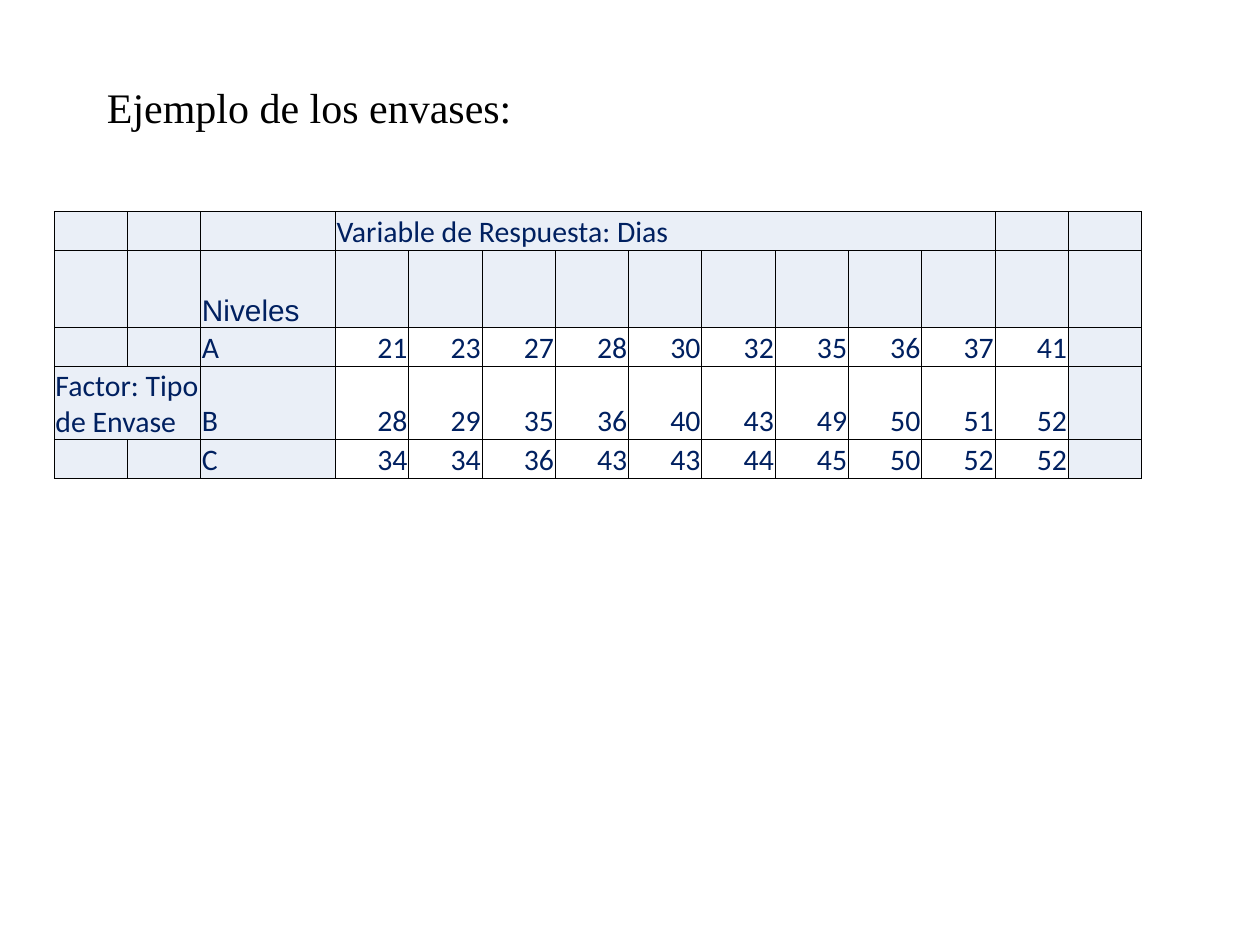
from lxml.etree import SubElement
from pptx import Presentation
from pptx.dml.color import RGBColor
from pptx.enum.text import MSO_ANCHOR, PP_ALIGN
from pptx.oxml import parse_xml
from pptx.oxml.ns import nsdecls, qn
from pptx.util import Inches, Pt

BLACK = RGBColor(0x00, 0x00, 0x00)
NAVY = RGBColor(0x00, 0x20, 0x60)
PALE_BLUE = RGBColor(0xEA, 0xEF, 0xF7)

# Content
HEADING = "Ejemplo de los envases:"
LABELS = {  # (row, column): text, font
    (0, 3): ("Variable de Respuesta: Dias", "Calibri"),
    (1, 2): ("Niveles", "Arial"),
    (3, 0): ("Factor: Tipo de Envase", "Calibri"),
}
DAYS = {
    "A": [21, 23, 27, 28, 30, 32, 35, 36, 37, 41],
    "B": [28, 29, 35, 36, 40, 43, 49, 50, 51, 52],
    "C": [34, 34, 36, 43, 43, 44, 45, 50, 52, 52],
}

# Layout
LEFT, TOP, WIDTH = 0.43, 1.68, 8.63
ROW_HEIGHTS = [0.31, 0.61, 0.31, 0.57, 0.31]
COLUMNS, LEVEL_COLUMN, LEVEL_WIDTH = 14, 2, 1.07
FIRST_DAYS_ROW = 2
MERGES = [((0, 3), (0, 11)), ((3, 0), (3, 1))]
TEXT_SIZE = 17


def add_run(paragraph, text, font, size, color):
    run = paragraph.add_run()
    run.text = text
    run.font.name = font
    run.font.size = Pt(size)
    run.font.color.rgb = color


def add_borders(cell):
    properties = cell._tc.get_or_add_tcPr()
    for position, side in enumerate(("lnL", "lnR", "lnT", "lnB")):
        properties.insert(position, parse_xml(
            f'<a:{side} {nsdecls("a")} w="{Pt(0.5)}"><a:solidFill>'
            f'<a:srgbClr val="{BLACK}"/></a:solidFill></a:{side}>'))


presentation = Presentation()
presentation.slide_width, presentation.slide_height = Inches(10), Inches(7.5)
slide = presentation.slides.add_slide(presentation.slide_layouts[6])

# Heading
heading = slide.shapes.add_textbox(Inches(0.75), Inches(0.6), Inches(8.58), Inches(0.5))
heading.text_frame.word_wrap = True
add_run(heading.text_frame.paragraphs[0], HEADING, "Times New Roman", 24, BLACK)

# Table grid
days_table = slide.shapes.add_table(
    len(ROW_HEIGHTS), COLUMNS, Inches(LEFT), Inches(TOP),
    Inches(WIDTH), Inches(sum(ROW_HEIGHTS))).table
days_table.first_row = days_table.horz_banding = False
for row, height in zip(days_table.rows, ROW_HEIGHTS):
    row.height = Inches(height)
for index, column in enumerate(days_table.columns):
    column.width = Inches(LEVEL_WIDTH if index == LEVEL_COLUMN
                          else (WIDTH - LEVEL_WIDTH) / (COLUMNS - 1))

# Labels and values by cell
texts = dict(LABELS)
values = set()
for row_index, (level, days) in enumerate(DAYS.items(), FIRST_DAYS_ROW):
    texts[row_index, LEVEL_COLUMN] = (level, "Calibri")
    for column_index, day in enumerate(days, LEVEL_COLUMN + 1):
        texts[row_index, column_index] = (str(day), "Calibri")
        values.add((row_index, column_index))

# Cells
for row_index in range(len(ROW_HEIGHTS)):
    for column_index in range(COLUMNS):
        place = (row_index, column_index)
        cell = days_table.cell(*place)
        cell.margin_left = cell.margin_right = cell.margin_top = Inches(0.01)
        cell.margin_bottom = 0
        cell.vertical_anchor = MSO_ANCHOR.BOTTOM
        paragraph = cell.text_frame.paragraphs[0]
        if place in values:
            cell.fill.background()
            paragraph.alignment = PP_ALIGN.RIGHT
        else:
            cell.fill.solid()
            cell.fill.fore_color.rgb = PALE_BLUE
        if place in texts:
            add_run(paragraph, *texts[place], TEXT_SIZE, NAVY)
        else:
            SubElement(paragraph._p, qn("a:endParaRPr"), sz=str(TEXT_SIZE * 100))
        add_borders(cell)

for first, last in MERGES:
    days_table.cell(*first).merge(days_table.cell(*last))

presentation.save("out.pptx")
